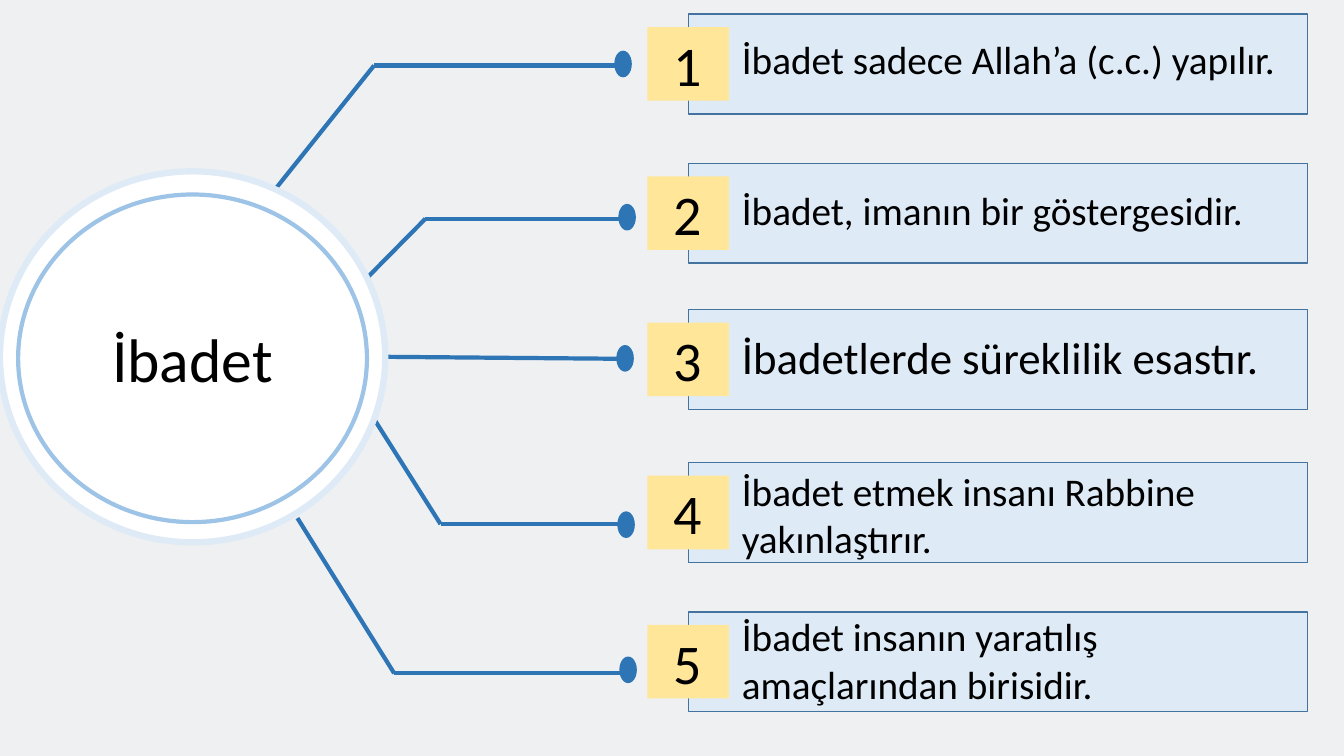
"""Build the slide that links İbadet to five numbered statements."""
from lxml.etree import SubElement
from pptx import Presentation
from pptx.dml.color import RGBColor
from pptx.enum.shapes import MSO_CONNECTOR, MSO_SHAPE
from pptx.enum.text import MSO_ANCHOR, PP_ALIGN
from pptx.oxml.ns import qn
from pptx.util import Inches, Pt

BACKGROUND = RGBColor(0xEE, 0xF0, 0xF2)
BRANCH_BLUE = RGBColor(0x2E, 0x75, 0xB6)
RING_BLUE = RGBColor(0x9D, 0xC3, 0xE6)
PALE_BLUE = RGBColor(0xDE, 0xEB, 0xF7)
BORDER_BLUE = RGBColor(0x43, 0x73, 0x9E)
YELLOW = RGBColor(0xFF, 0xE6, 0x99)
WHITE = RGBColor(0xFF, 0xFF, 0xFF)
BLACK = RGBColor(0, 0, 0)

CELL = Inches(0.1)
BAR_COLUMN, BAR_COLUMNS, BAR_ROWS = 68.3, 61.4, 9.9
BADGE_COLUMN, BADGE_COLUMNS, BADGE_ROWS = 64.2, 8.1, 7.3
LABEL_COLUMN, LABEL_COLUMNS = 72.6, 56.4
DOT_COLUMNS, DOT_ROWS = 1.6, 2.5

deck = Presentation()
deck.slide_width, deck.slide_height = Inches(13.33), Inches(7.5)
page = deck.slides.add_slide(deck.slide_layouts[6])
page.background.fill.solid()
page.background.fill.fore_color.rgb = BACKGROUND


def add_figure(preset, area, fill, line=None, weight=1):
    """Add a flat shape whose area is given in grid cells."""
    figure = page.shapes.add_shape(preset, *[round(cells * CELL) for cells in area])
    figure.shadow.inherit = False
    figure.fill.solid()
    figure.fill.fore_color.rgb = fill
    if line is None:
        figure.line.fill.background()
    else:
        figure.line.color.rgb = line
        figure.line.width = Pt(weight)
    return figure


def write(box, text, size, align, anchor):
    """Write one paragraph into a box."""
    box.text_frame.word_wrap = True
    box.text_frame.vertical_anchor = anchor
    para = box.text_frame.paragraphs[0]
    para.text = text
    para.alignment = align
    para.font.name = "Calibri"
    para.font.size = Pt(size)
    para.font.color.rgb = BLACK


branches = [
    ([(27.2, 18.9), (37.1, 6.5), (61.8, 6.5)], (61, 5.1)),
    ([(34.2, 29.8), (42.2, 21.7), (62.2, 21.7)], (61.4, 20.3)),
    ([(38.2, 35.4), (62, 35.6)], (61.2, 34.3)),
    ([(36.3, 40.3), (43.7, 52), (62.1, 52)], (61.3, 50.8)),
    ([(29.5, 51.4), (39.1, 66.8), (62.3, 66.8)], (61.5, 65.2)),
]
for points, dot in branches:
    for start, end in zip(points, points[1:]):
        branch = page.shapes.add_connector(
            MSO_CONNECTOR.STRAIGHT, *[round(cells * CELL) for cells in start + end])
        branch.line.color.rgb = BRANCH_BLUE
        branch.line.width = Pt(3)
        SubElement(branch._element.spPr, qn("a:effectLst"))
    add_figure(MSO_SHAPE.OVAL, (*dot, DOT_COLUMNS, DOT_ROWS), BRANCH_BLUE, BRANCH_BLUE)

add_figure(MSO_SHAPE.OVAL, (0, 17, 38.2, 36.8), WHITE, PALE_BLUE, 4.5)
hub = add_figure(MSO_SHAPE.OVAL, (1.8, 19.3, 34.6, 32.5), WHITE, RING_BLUE, 3)
write(hub, "İbadet", 44, PP_ALIGN.CENTER, MSO_ANCHOR.MIDDLE)

statements = [
    (1.4, 3, 5.7, 28, "İbadet sadece Allah’a (c.c.) yapılır."),
    (16.2, 18, 5.7, 28, "İbadet, imanın bir göstergesidir."),
    (30.7, 32.2, 6.4, 32, "İbadetlerde süreklilik esastır."),
    (45.9, 45.9, 10.4, 28, "İbadet etmek insanı Rabbine yakınlaştırır."),
    (60.7, 60.3, 10.4, 28, "İbadet insanın yaratılış amaçlarından birisidir."),
]
for number, (bar_row, label_row, label_rows, size, text) in enumerate(statements, 1):
    add_figure(MSO_SHAPE.RECTANGLE, (BAR_COLUMN, bar_row, BAR_COLUMNS, BAR_ROWS),
               PALE_BLUE, BORDER_BLUE)
    badge_row = bar_row + (BAR_ROWS - BADGE_ROWS) / 2
    badge = add_figure(MSO_SHAPE.RECTANGLE,
                       (BADGE_COLUMN, badge_row, BADGE_COLUMNS, BADGE_ROWS), YELLOW)
    write(badge, str(number), 40, PP_ALIGN.CENTER, MSO_ANCHOR.MIDDLE)
    label_area = (LABEL_COLUMN, label_row, LABEL_COLUMNS, label_rows)
    label = page.shapes.add_textbox(*[round(cells * CELL) for cells in label_area])
    write(label, text, size, PP_ALIGN.LEFT, MSO_ANCHOR.TOP)

deck.save("out.pptx")
